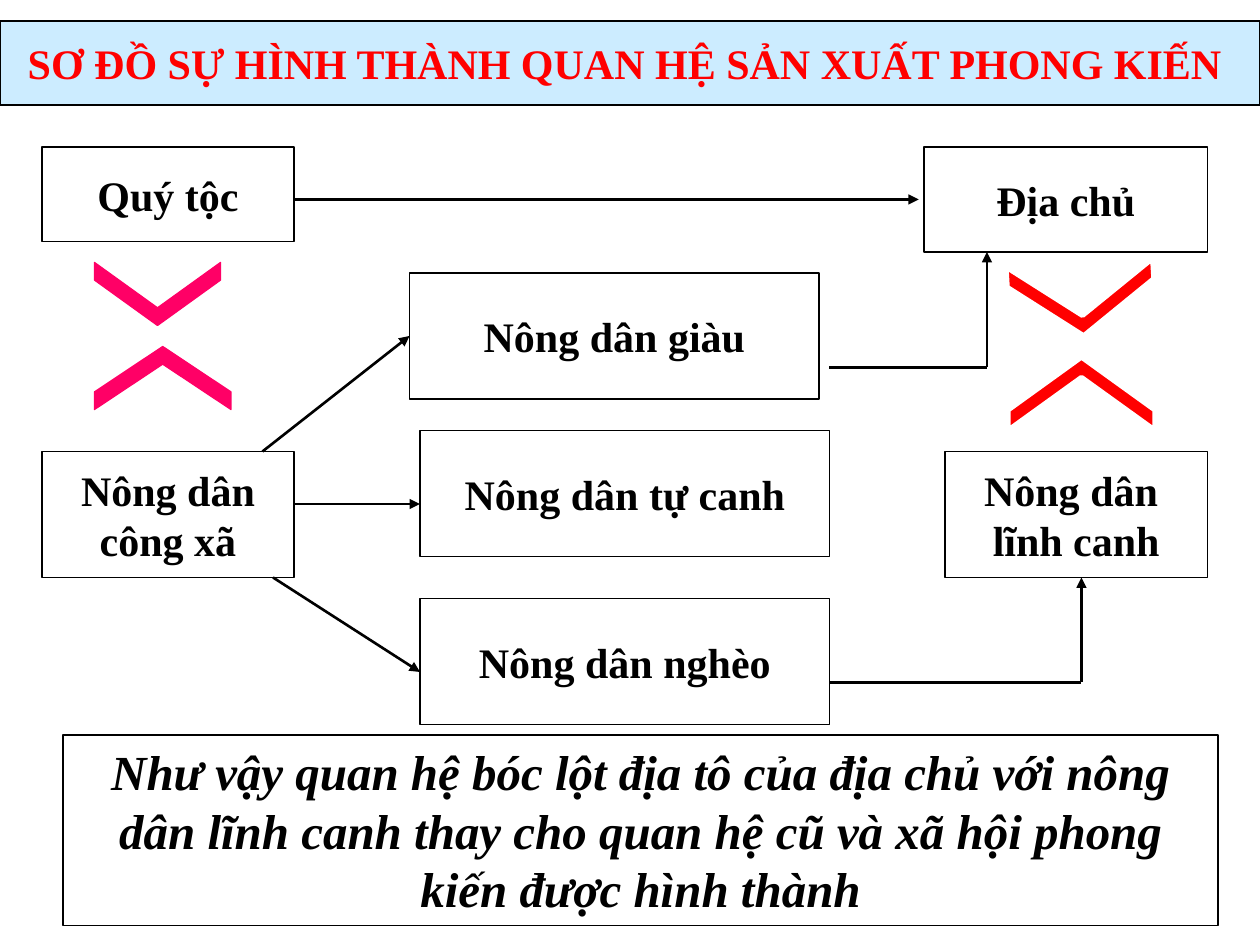
"""Build the slide on how feudal production relations took shape."""
from dataclasses import dataclass

from pptx import Presentation
from pptx.dml.color import RGBColor
from pptx.enum.shapes import MSO_CONNECTOR as CONN, MSO_SHAPE as SHAPE
from pptx.enum.text import MSO_ANCHOR as ANCHOR, MSO_AUTO_SIZE as FIT, PP_ALIGN as ALIGN
from pptx.oxml.ns import qn
from pptx.util import Pt


@dataclass(frozen=True)
class Theme:
    """Colours, font and sizes of the slide."""
    black: str = "000000"
    white: str = "FFFFFF"
    red: str = "FF0000"
    pink: str = "FF0066"
    pale_blue: str = "CCECFF"
    font: str = "Times New Roman"
    label: int = 24
    conclusion: int = 28
    thin: float = 0.75
    arrow: float = 1.5
    thick: float = 3


THEME = Theme()
TITLE = "SƠ ĐỒ SỰ HÌNH THÀNH QUAN HỆ SẢN XUẤT PHONG KIẾN "
CONCLUSION = ("Như vậy quan hệ bóc lột địa tô của địa chủ với nông dân lĩnh canh "
              "thay cho quan hệ cũ và xã hội phong kiến được hình thành")
CLASSES = [
    ("Quý tộc", (24, 84, 144, 54)),
    ("Nông dân\ncông xã", (24, 258, 144, 72)),
    ("Địa chủ", (528, 84, 162, 60)),
    ("Nông dân \nlĩnh canh", (540, 258, 150, 72)),
    ("Nông dân giàu", (234, 156, 234, 72)),
    ("Nông dân tự canh", (240, 246, 234, 72)),
    ("Nông dân nghèo", (240, 342, 234, 72)),
]
ROUTES = [
    [(168, 114), (525, 114)],
    [(150, 258), (234, 192)],
    [(168, 288), (240, 288)],
    [(156, 330), (240, 384)],
    [(474, 390), (618, 390), (618, 330)],
    [(474, 210), (564, 210), (564, 144)],
]
CHEVRONS = [
    ((75, 177, 36, 78), 270, THEME.pink, THEME.pink, THEME.thin),
    ((72, 132, 36, 72), 90, THEME.pink, THEME.pink, THEME.thin),
    ((597, 183, 42, 84), 270, THEME.red, THEME.white, THEME.thick),
    ((597, 129, 42, 84), 86.6, THEME.red, THEME.white, THEME.thick),
]


def set_attrs(obj, **values):
    """Set each named attribute of an object."""
    for name, value in values.items():
        setattr(obj, name, value)


def paint(sp, fill, line, width):
    """Give a shape its fill and outline."""
    if fill:
        sp.fill.solid()
        sp.fill.fore_color.rgb = RGBColor.from_string(fill)
    else:
        sp.fill.background()
    sp.line.color.rgb = RGBColor.from_string(line)
    sp.line.width = Pt(width)


def write(sp, text, size=THEME.label, color=THEME.black, italic=False,
          wrap=False, anchor=ANCHOR.MIDDLE):
    """Write centred bold text, one paragraph a line."""
    tf = sp.text_frame
    tf.text = text
    set_attrs(tf, word_wrap=wrap, auto_size=FIT.NONE, vertical_anchor=anchor)
    for p in tf.paragraphs:
        set_attrs(p, alignment=ALIGN.CENTER, line_spacing=1.0, space_before=Pt(0))
        for r in p.runs:
            set_attrs(r.font, name=THEME.font, size=Pt(size), bold=True, italic=italic)
            r.font.color.rgb = RGBColor.from_string(color)


def add_title(slide, text, box):
    """Fill and place the title banner."""
    sp = slide.shapes.title
    set_attrs(sp, **dict(zip(("left", "top", "width", "height"), map(Pt, box))))
    paint(sp, THEME.pale_blue, THEME.black, THEME.thin)
    write(sp, text, color=THEME.red)


def add_box(slide, text, box, fill=THEME.white, **text_format):
    """Add an outlined rectangle with text."""
    sp = slide.shapes.add_shape(SHAPE.RECTANGLE, *map(Pt, box))
    sp.shadow.inherit = False
    paint(sp, fill, THEME.black, THEME.thin)
    write(sp, text, **text_format)


def add_chevron(slide, box, rotation, fill, line, width):
    """Add a turned chevron that marks opposed classes."""
    sp = slide.shapes.add_shape(SHAPE.CHEVRON, *map(Pt, box))
    sp.shadow.inherit = False
    sp.adjustments[0] = 0.72
    sp.rotation = rotation
    paint(sp, fill, line, width)


def add_route(slide, points):
    """Join points with lines, the last one ending in an arrowhead."""
    for start, end in zip(points, points[1:]):
        line = slide.shapes.add_connector(CONN.STRAIGHT, *map(Pt, start + end))
        line.line.color.rgb = RGBColor.from_string(THEME.black)
        line.line.width = Pt(THEME.arrow)
        sp_pr = line._element.spPr
        sp_pr.append(sp_pr.makeelement(qn("a:effectLst"), {}))
    ln = line.line._get_or_add_ln()
    ln.append(ln.makeelement(qn("a:tailEnd"), {"type": "triangle"}))


def main():
    """Build and save the slide."""
    prs = Presentation()
    set_attrs(prs, slide_width=Pt(720), slide_height=Pt(540))
    slide = prs.slides.add_slide(prs.slide_layouts[5])
    add_title(slide, TITLE, (0, 12, 720, 48))
    for text, box in CLASSES:
        add_box(slide, text, box)
    for chevron in CHEVRONS:
        add_chevron(slide, *chevron)
    for points in ROUTES:
        add_route(slide, points)
    add_box(slide, CONCLUSION, (36, 420, 660, 109), fill=None,
            size=THEME.conclusion, italic=True, wrap=True, anchor=ANCHOR.TOP)
    prs.save("out.pptx")


if __name__ == "__main__":
    main()
